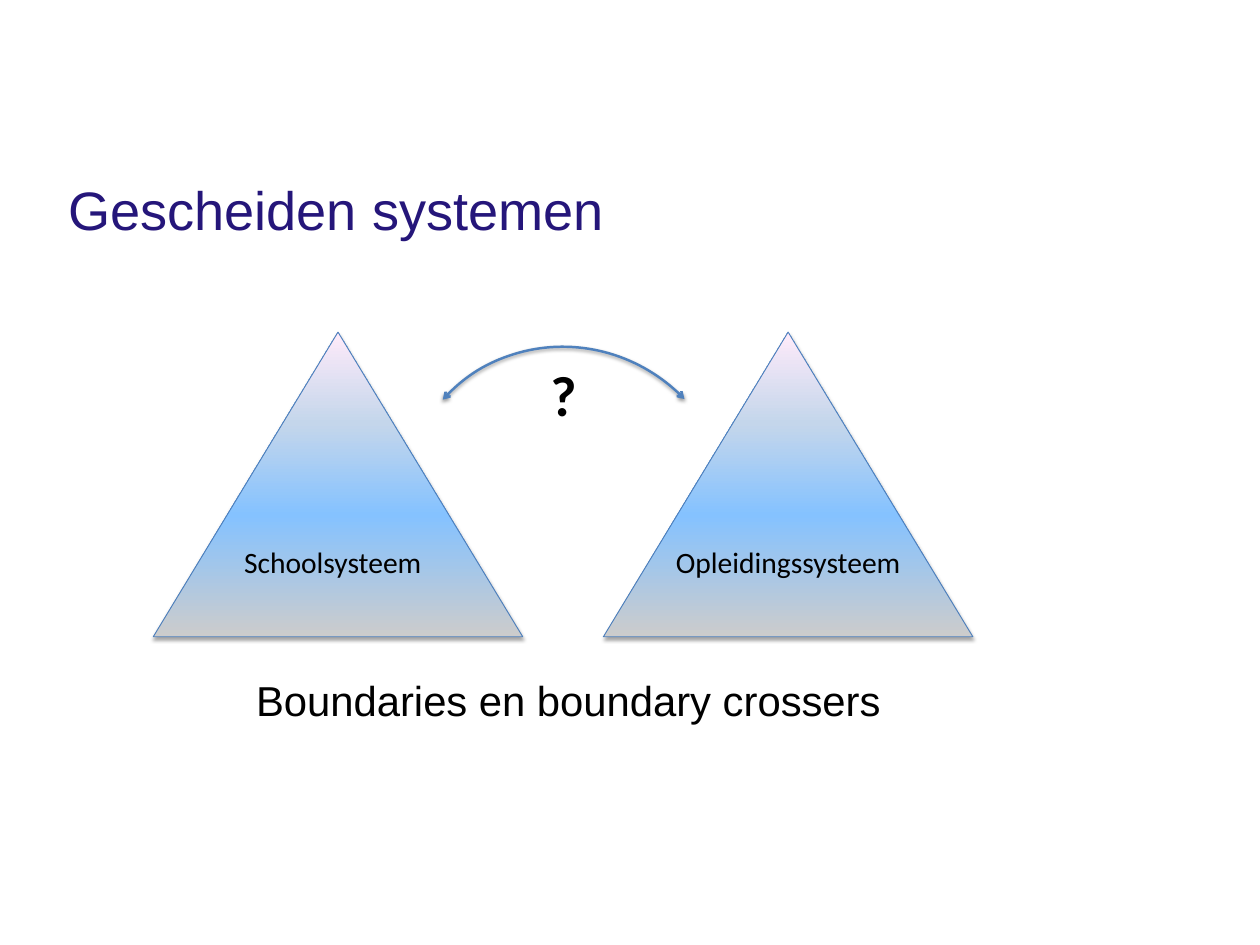
import dataclasses

import pptx
import pptx.dml.color
import pptx.enum.shapes
import pptx.enum.text
import pptx.oxml.ns
import pptx.util
from lxml import etree

Inches = pptx.util.Inches
Pt = pptx.util.Pt
RGB = pptx.dml.color.RGBColor.from_string
qn = pptx.oxml.ns.qn
SHAPE = pptx.enum.shapes.MSO_SHAPE
ALIGN = pptx.enum.text.PP_ALIGN
ANCHOR = pptx.enum.text.MSO_ANCHOR


@dataclasses.dataclass(frozen=True)
class Theme:
    title: str = "25167A"
    text: str = "000000"
    outline: str = "4B7EBC"
    arrow: str = "4F81BD"
    shadow: str = "000000"
    gradient: tuple = ((0, "CCCCCC"), (40, "85C2FF"), (70, "C4D6EB"), (100, "FFEBFA"))
    heading_font: str = "Arial"
    label_font: str = "Calibri"
    title_size: int = 44
    question_size: int = 46
    caption_size: int = 34
    label_size: int = 24


THEME = Theme()


def add_text(s, text, box, size, font, color=THEME.text, bold=False, align=ALIGN.LEFT,
             anchor=ANCHOR.TOP, wrap=True, insets=(0.14, 0.07, 0.14, 0.07)):
    tf = s.shapes.add_textbox(*map(Inches, box)).text_frame
    tf.word_wrap = wrap
    tf.vertical_anchor = anchor
    tf.margin_left, tf.margin_top, tf.margin_right, tf.margin_bottom = map(Inches, insets)
    p = tf.paragraphs[0]
    p.alignment = align
    r = p.add_run()
    r.text = text
    r.font.size = Pt(size)
    r.font.name = font
    r.font.bold = bold
    r.font.color.rgb = RGB(color)


def add_shadow(sp, alpha, distance):
    sp.shadow.inherit = False
    effects = sp._element.spPr.find(qn("a:effectLst"))
    shadow = etree.SubElement(effects, qn("a:outerShdw"), blurRad=str(Pt(3.1)),
                              dist=str(Pt(distance)), dir="5400000", rotWithShape="0")
    color = etree.SubElement(shadow, qn("a:srgbClr"), val=THEME.shadow)
    etree.SubElement(color, qn("a:alpha"), val=str(alpha * 1000))


def fill_gradient(sp):
    sp.fill.gradient()
    sp.fill.gradient_angle = 90
    stops = sp._element.spPr.find(qn("a:gradFill")).find(qn("a:gsLst"))
    for stop in list(stops):
        stops.remove(stop)
    for position, color in THEME.gradient:
        stop = etree.SubElement(stops, qn("a:gs"), pos=str(position * 1000))
        etree.SubElement(stop, qn("a:srgbClr"), val=color)


def add_title(s, box):
    add_text(s, "Gescheiden systemen", box, THEME.title_size, THEME.heading_font,
             THEME.title, anchor=ANCHOR.MIDDLE, insets=(0.06, 0.06, 0.12, 0.06))


def add_system(s, name, box, label_shift):
    x, y, w, h = box
    sp = s.shapes.add_shape(SHAPE.ISOSCELES_TRIANGLE, *map(Inches, box))
    fill_gradient(sp)
    sp.line.color.rgb = RGB(THEME.outline)
    sp.line.width = Pt(0.75)
    add_shadow(sp, 35, 1.8)
    label_width = 3
    label_x = x + (w - label_width) / 2 + label_shift
    add_text(s, name, (label_x, y + 2.32, label_width, 0.55), THEME.label_size,
             THEME.label_font, align=ALIGN.CENTER)


def add_crossing(s, box):
    x, y, w, h = box
    add_text(s, "?", (x + 1.51, y + 0.1, 0.58, 0.91), THEME.question_size,
             THEME.label_font, bold=True, wrap=False)
    sp = s.shapes.add_shape(SHAPE.ARC, *map(Inches, box))
    sp.adjustments[0] = 162
    sp.adjustments[1] = 2.684
    sp.rotation = 312
    sp.fill.background()
    sp.line.color.rgb = RGB(THEME.arrow)
    sp.line.width = Pt(2)
    for end in ("a:headEnd", "a:tailEnd"):
        etree.SubElement(sp._element.spPr.find(qn("a:ln")), qn(end), type="arrow")
    add_shadow(sp, 38, 1.6)


def add_caption(s, box):
    add_text(s, "Boundaries en boundary crossers", box, THEME.caption_size,
             THEME.heading_font)


def main():
    prs = pptx.Presentation()
    prs.slide_width = Inches(14.22)
    prs.slide_height = Inches(10.67)
    s = prs.slides.add_slide(prs.slide_layouts[6])
    add_title(s, (0.71, 1.45, 12.81, 1.82))
    systems = (("Schoolsysteem", -0.06), ("Opleidingssysteem", 0))
    for i, (name, label_shift) in enumerate(systems):
        add_system(s, name, (1.73 + i * 5.08, 3.75, 4.17, 3.44), label_shift)
    add_crossing(s, (4.56, 3.89, 3.67, 3.76))
    add_caption(s, (2.75, 7.55, 7.52, 0.84))
    prs.save("out.pptx")


if __name__ == "__main__":
    main()
